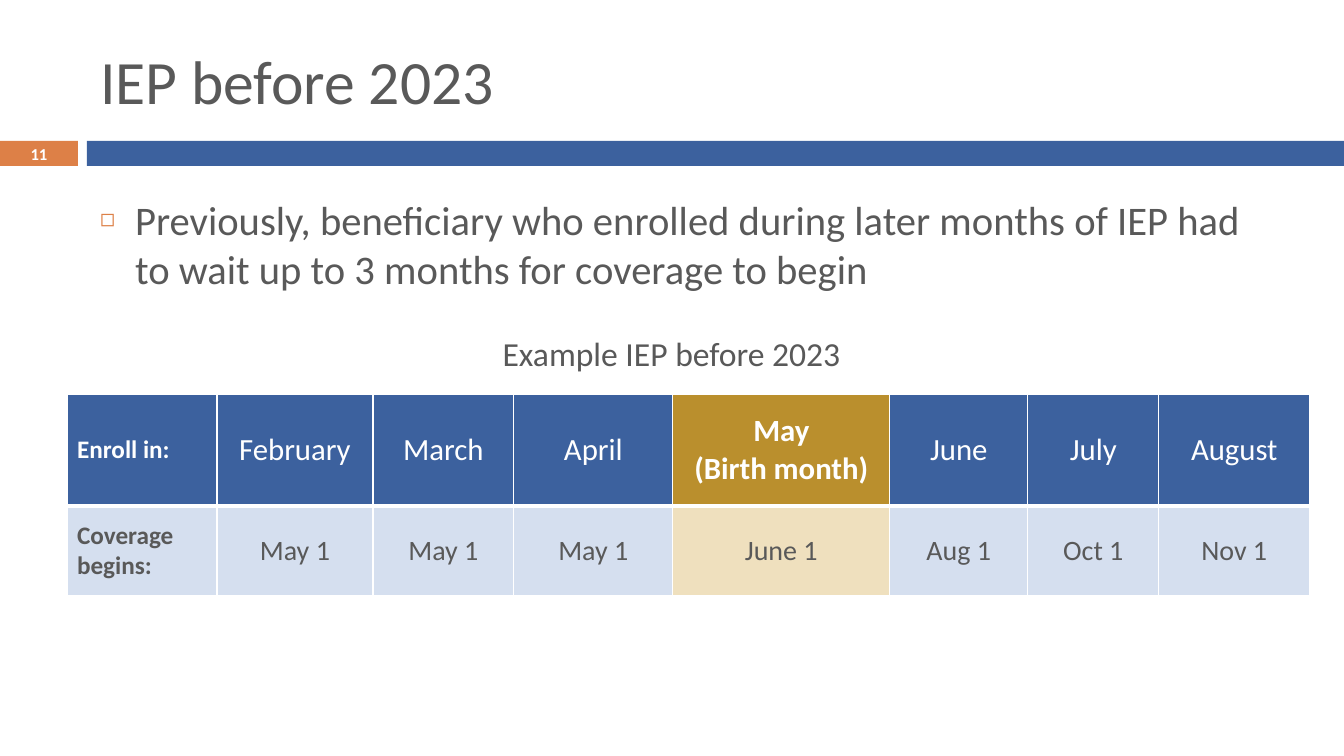
from lxml.etree import SubElement
from pptx import Presentation
from pptx.dml.color import RGBColor
from pptx.enum.shapes import MSO_SHAPE
from pptx.enum.text import MSO_ANCHOR, MSO_AUTO_SIZE, PP_ALIGN
from pptx.oxml.ns import qn
from pptx.util import Emu, Pt

# Content
TITLE = "IEP before 2023"
POINT = ("Previously, beneficiary who enrolled during later months of IEP had "
         "to wait up to 3 months for coverage to begin")
CAPTION = "Example IEP before 2023"
NUMBER = "11"
ROWS = [
    ["Enroll in:", "February", "March", "April", "May\n(Birth month)",
     "June", "July", "August"],
    ["Coverage begins:", "May 1", "May 1", "May 1", "June 1",
     "Aug 1", "Oct 1", "Nov 1"],
]
BIRTH = 4  # column of the birth month

# Look
FONT = "Calibri"
COLORS = {"text": "595959", "white": "FFFFFF", "blue": "3C619E",
          "orange": "DD8047", "gold": "BA8F2D", "pale": "D5DFEF",
          "cream": "EFE0BE"}
# Per row: height, month size, text colour, fill, birth month fill
STYLES = [(112, 22, "white", "blue", "gold"),
          (90, 20, "text", "pale", "cream")]
WIDTHS = [150, 156, 141, 159, 217, 138, 131, 151]
LEFT, TOP = 67, 394


def px(n):
    return Emu(round(n * 914400 / 100.8))


def box(*sides):
    return [px(n) for n in sides]


def rgb(name):
    return RGBColor.from_string(COLORS[name])


def style(para, size, color, bold=False, align=PP_ALIGN.LEFT):
    para.alignment = align
    font = para.font
    font.name, font.size, font.bold = FONT, Pt(size), bold
    font.color.rgb = rgb(color)


def place(shape, sides, anchor):
    shape.left, shape.top, shape.width, shape.height = box(*sides)
    frame = shape.text_frame
    frame.word_wrap = True
    frame.auto_size = MSO_AUTO_SIZE.NONE
    frame.vertical_anchor = anchor
    return frame


def label(sides, text, size, color, bold, anchor):
    frame = place(shapes.add_textbox(0, 0, 0, 0), sides, anchor)
    frame.text = text
    style(frame.paragraphs[0], size, color, bold, PP_ALIGN.CENTER)


def border(cell, widths):
    props = cell._tc.get_or_add_tcPr()
    for side, width in zip("LRTB", widths):
        line = SubElement(props, qn(f"a:ln{side}"), w=str(Pt(width)))
        fill = SubElement(line, qn("a:solidFill"))
        SubElement(fill, qn("a:srgbClr"), val=COLORS["white"])


deck = Presentation()
deck.slide_width, deck.slide_height = px(1344), px(756)
slide = deck.slides.add_slide(deck.slide_layouts[1])
shapes = slide.shapes

# Band under the title
for x, width, color in [(0, 78, "orange"), (87, 1257, "blue")]:
    bar = shapes.add_shape(MSO_SHAPE.RECTANGLE, *box(x, 141, width, 25))
    bar.shadow.inherit = False
    bar.fill.solid()
    bar.fill.fore_color.rgb = rgb(color)
    bar.line.fill.background()
label((0, 140, 78, 27), NUMBER, 11.9, "white", True, MSO_ANCHOR.MIDDLE)

# Title
frame = place(shapes.title, (90, 25, 1199, 109), MSO_ANCHOR.MIDDLE)
frame.text = TITLE
style(frame.paragraphs[0], 44, "text")

# Bullet point
frame = place(slide.placeholders[1], (90, 190, 1199, 235), MSO_ANCHOR.TOP)
frame.text = POINT
para = frame.paragraphs[0]
para.space_before = Pt(7)
props = para._p.get_or_add_pPr()
props.set("marL", str(px(35)))
props.set("indent", str(px(-35)))
tint = SubElement(props, qn("a:buClr"))
SubElement(tint, qn("a:srgbClr"), val=COLORS["orange"])
SubElement(props, qn("a:buSzPct"), val="60000")
SubElement(props, qn("a:buChar"), char="◻")
style(para, 29, "text")

# Table
height = sum(look[0] for look in STYLES)
table = shapes.add_table(len(ROWS), len(WIDTHS),
                         *box(LEFT, TOP, sum(WIDTHS), height)).table
for col, width in zip(table.columns, WIDTHS):
    col.width = px(width)
for r, (texts, look) in enumerate(zip(ROWS, STYLES)):
    tall, size, color, main, accent = look
    table.rows[r].height = px(tall)
    for c, text in enumerate(texts):
        cell = table.cell(r, c)
        border(cell, (1, 1, 1 if r == 0 else 3, 3 if r == 0 else 1))
        cell.fill.solid()
        cell.fill.fore_color.rgb = rgb(accent if c == BIRTH else main)
        cell.vertical_anchor = MSO_ANCHOR.MIDDLE
        cell.text = text
        for para in cell.text_frame.paragraphs:
            if c == 0:
                style(para, 18, color, True)
            else:
                style(para, size, color, r == 0 and c == BIRTH,
                      PP_ALIGN.CENTER)

# Table caption
label((336, 328, 671, 50), CAPTION, 24, "text", False, MSO_ANCHOR.TOP)

deck.save("out.pptx")
